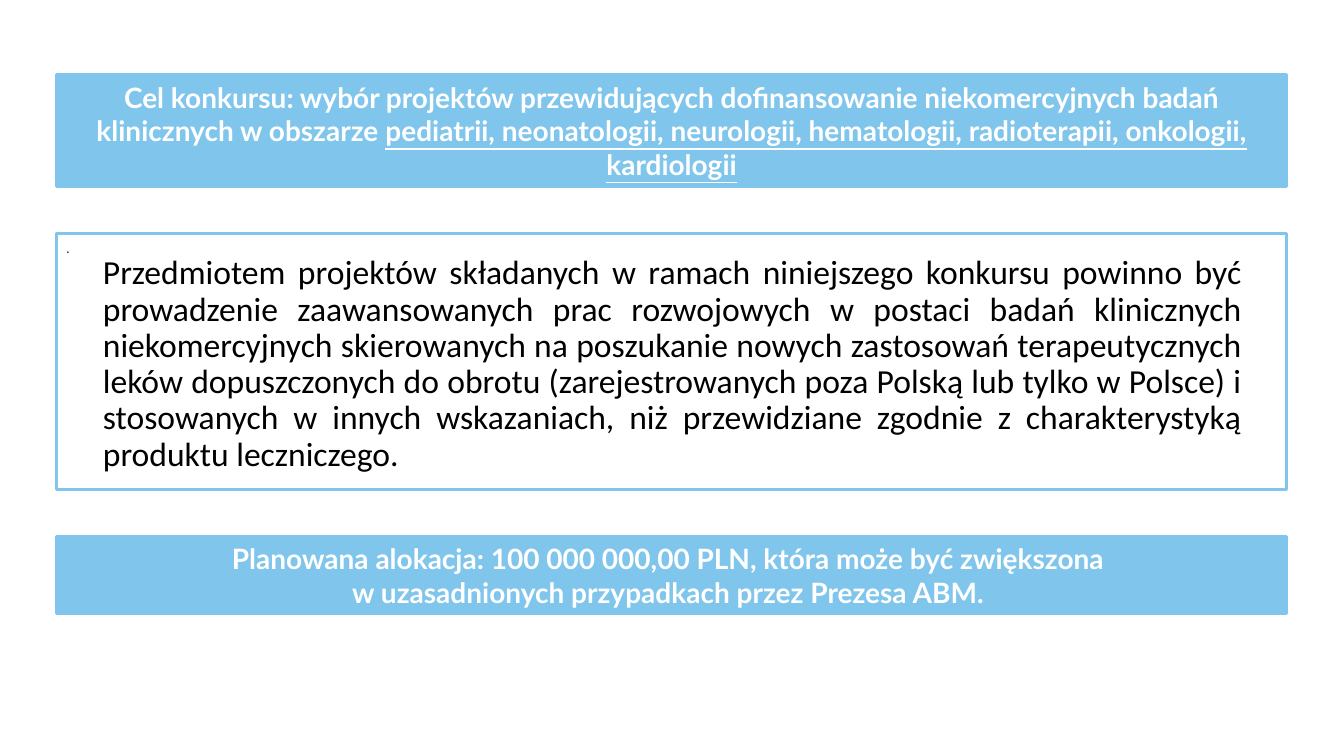
from dataclasses import dataclass

from lxml import etree
from pptx import Presentation
from pptx.dml.color import RGBColor
from pptx.enum.shapes import MSO_SHAPE
from pptx.enum.text import MSO_ANCHOR, MSO_AUTO_SIZE, PP_ALIGN
from pptx.oxml.ns import qn
from pptx.util import Cm, Pt

RECT = MSO_SHAPE.RECTANGLE
TOP, MIDDLE = MSO_ANCHOR.TOP, MSO_ANCHOR.MIDDLE
LEFT, CENTER, JUSTIFY = PP_ALIGN.LEFT, PP_ALIGN.CENTER, PP_ALIGN.JUSTIFY
NO_FIT = MSO_AUTO_SIZE.NONE


@dataclass(frozen=True)
class Theme:
    blue: RGBColor = RGBColor(0x80, 0xC5, 0xEC)
    white: RGBColor = RGBColor(0xFF, 0xFF, 0xFF)
    black: RGBColor = RGBColor(0, 0, 0)
    grey: RGBColor = RGBColor(0x3B, 0x38, 0x38)
    bar_font: str = "Lato"
    body_font: str = "Calibri"
    bar_size: Pt = Pt(20)
    body_size: Pt = Pt(24)
    dot_size: Pt = Pt(10.5)
    border: Pt = Pt(2.25)


THEME = Theme()

# Every box shares the same left edge and width
BOX_LEFT, BOX_WIDTH = Cm(1.42), Cm(31.01)

GOAL = ("Cel konkursu: wybór projektów przewidujących dofinansowanie "
        "niekomercyjnych badań klinicznych w obszarze ")
FIELDS = ("pediatrii, neonatologii, neurologii, hematologii, radioterapii, "
          "onkologii, kardiologii")
SUBJECT = ("Przedmiotem projektów składanych w ramach niniejszego konkursu "
           "powinno być prowadzenie zaawansowanych prac rozwojowych w postaci "
           "badań klinicznych niekomercyjnych skierowanych na poszukanie nowych "
           "zastosowań terapeutycznych leków dopuszczonych do obrotu "
           "(zarejestrowanych poza Polską lub tylko w Polsce) i stosowanych "
           "w innych wskazaniach, niż przewidziane zgodnie z charakterystyką "
           "produktu leczniczego.")
BUDGET = "Planowana alokacja: 100 000 000,00 PLN, która może być zwiększona "
BUDGET_TERMS = "w uzasadnionych przypadkach przez Prezesa ABM. "


def add_run(p, text, font, size, color, bold=False, underline=False):
    r = p.add_run()
    r.text = text
    r.font.name, r.font.size = font, size
    r.font.color.rgb = color
    r.font.bold, r.font.underline = bold, underline


def add_bar_run(p, text, underline=False):
    add_run(p, text, THEME.bar_font, THEME.bar_size, THEME.white,
            bold=True, underline=underline)


def add_box(s, top, height, fill, anchor, align):
    """Add a bordered rectangle and return its first paragraph."""
    sp = s.shapes.add_shape(RECT, BOX_LEFT, top, BOX_WIDTH, height)
    sp.shadow.inherit = False
    sp.fill.solid()
    sp.fill.fore_color.rgb = fill
    sp.line.color.rgb = THEME.blue
    sp.line.width = THEME.border
    tf = sp.text_frame
    tf.word_wrap = True
    tf.vertical_anchor = anchor
    p = tf.paragraphs[0]
    p.alignment = align
    return p


def add_bar(s, top, height):
    return add_box(s, top, height, THEME.blue, MIDDLE, CENTER)


def add_body(s, text):
    sp = s.placeholders[1]
    sp.left, sp.top, sp.width, sp.height = Cm(2.34), Cm(6.32), Cm(29.21), Cm(5.85)
    s.shapes._spTree.append(sp._element)  # bring in front of the frame
    tf = sp.text_frame
    tf.word_wrap = True
    tf.auto_size = NO_FIT
    tf.vertical_anchor = TOP
    p = tf.paragraphs[0]
    p.alignment = JUSTIFY
    p.line_spacing = 0.9
    p.space_before = Pt(0)
    pPr = p._p.get_or_add_pPr()
    pPr.set("marL", "0")
    pPr.set("indent", "0")
    etree.SubElement(pPr, qn("a:buNone"))
    add_run(p, text, THEME.body_font, THEME.body_size, THEME.black)


def main():
    prs = Presentation()
    prs.slide_width, prs.slide_height = Cm(33.87), Cm(19.05)
    s = prs.slides.add_slide(prs.slide_layouts[1])
    title = s.shapes.title._element
    title.getparent().remove(title)

    # Framed subject of the projects
    p = add_box(s, Cm(5.89), Cm(6.45), THEME.white, TOP, LEFT)
    p.space_after = Pt(9)
    add_run(p, ".", THEME.body_font, THEME.dot_size, THEME.grey)
    add_body(s, SUBJECT)

    # Goal of the competition
    p = add_bar(s, Cm(1.88), Cm(2.82))
    add_bar_run(p, GOAL)
    add_bar_run(p, FIELDS, underline=True)

    # Planned budget
    p = add_bar(s, Cm(13.51), Cm(1.96))
    add_bar_run(p, BUDGET)
    p.add_line_break()
    add_bar_run(p, BUDGET_TERMS)

    prs.save("out.pptx")


if __name__ == "__main__":
    main()
